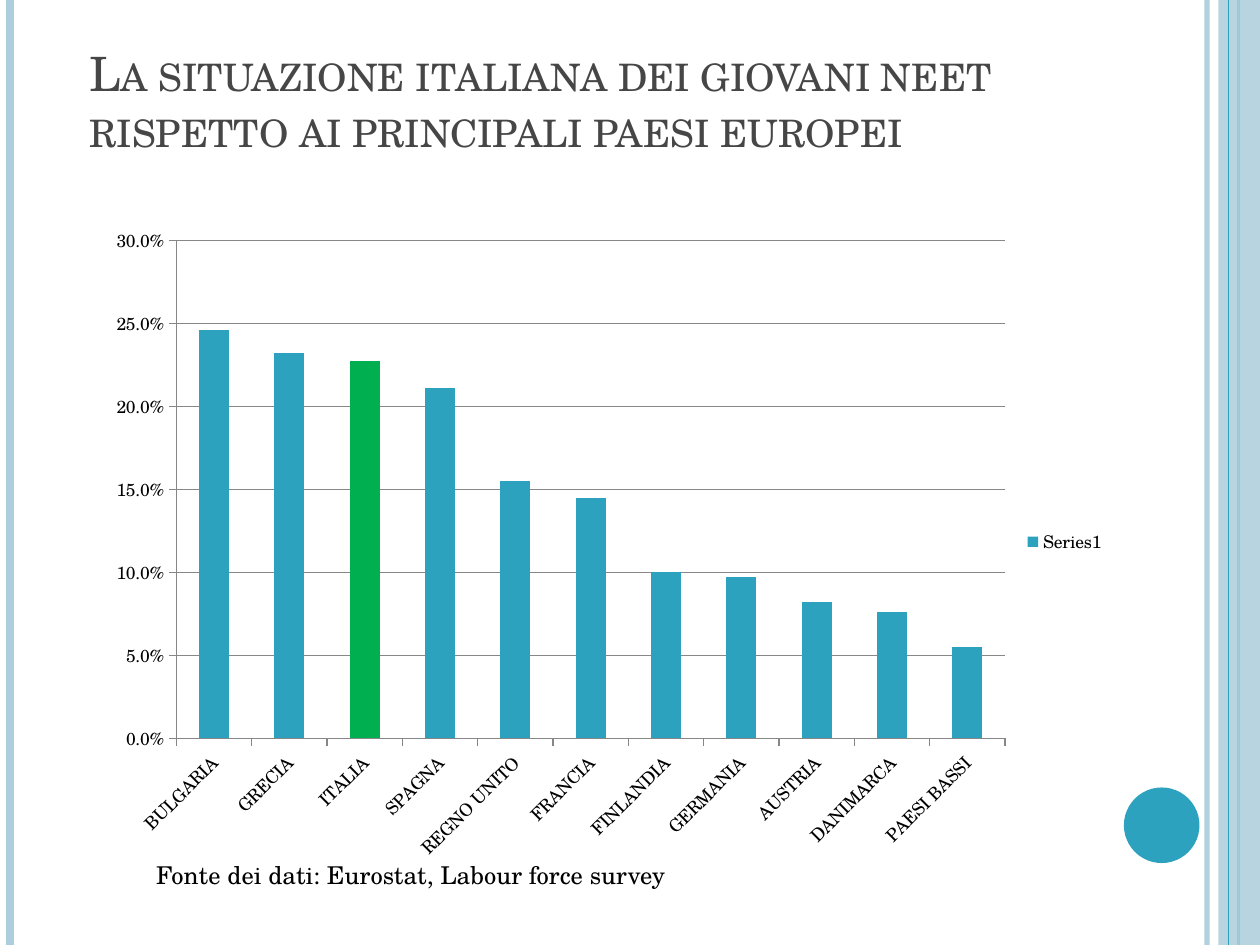
from lxml import etree
from pptx import Presentation, util as u
from pptx.chart.data import CategoryChartData
from pptx.dml.color import RGBColor
from pptx.enum import chart as c, shapes, text
from pptx.oxml import parse_xml
from pptx.oxml.ns import nsdecls, qn

FONT = "TeX Gyre Schola"
PALE = RGBColor(0xAD, 0xCE, 0xDC)
TEAL = RGBColor(0x2D, 0xA2, 0xBF)
GREEN = RGBColor(0x00, 0xB0, 0x50)
SLATE = RGBColor(0x46, 0x46, 0x46)
GREY = RGBColor(0x87, 0x87, 0x87)
BLACK = RGBColor(0, 0, 0)
WIDTH, HEIGHT = u.Inches(10), u.Inches(7.5)
HIGHLIGHTED = "ITALIA"
NEET_RATES = {
    "BULGARIA": 0.246, "GRECIA": 0.232, "ITALIA": 0.227, "SPAGNA": 0.211,
    "REGNO UNITO": 0.155, "FRANCIA": 0.145, "FINLANDIA": 0.1,
    "GERMANIA": 0.097, "AUSTRIA": 0.082, "DANIMARCA": 0.076,
    "PAESI BASSI": 0.055,
}


def inches(*lengths):
    """Convert several lengths to inches."""
    return [u.Inches(length) for length in lengths]


def set_opacity(shape, percent):
    """Make the first solid colour of a shape partly transparent."""
    color = next(shape._element.spPr.iter(qn("a:srgbClr")))
    etree.SubElement(color, qn("a:alpha"), val=str(percent * 1000))


def style_font(font, size, color):
    """Apply the slide's typeface with a size and a colour."""
    font.name, font.size = FONT, u.Pt(size)
    font.color.rgb = color


def add_rule(slide, x, color, weight, opacity=100):
    """Draw a vertical line over the full slide height."""
    line = slide.shapes.add_connector(
        shapes.MSO_CONNECTOR.STRAIGHT, u.Inches(x), 0, u.Inches(x), HEIGHT)
    line.line.color.rgb = color
    line.line.width = u.Pt(weight)
    etree.SubElement(line._element.spPr, qn("a:effectLst"))
    if opacity < 100:
        set_opacity(line, opacity)


def add_plain_shape(slide, kind, box, color, opacity=100):
    """Add a filled shape without outline or shadow."""
    shape = slide.shapes.add_shape(kind, *inches(*box))
    shape.shadow.inherit = False
    shape.fill.solid()
    shape.fill.fore_color.rgb = color
    shape.line.fill.background()
    if opacity < 100:
        set_opacity(shape, opacity)


def add_frame(slide):
    """Decorate the slide's edges and corner."""
    add_rule(slide, 9.58, PALE, 3, 93)
    add_rule(slide, 0.08, PALE, 4.5)
    add_rule(slide, 9.83, TEAL, 1.5)
    add_plain_shape(slide, shapes.MSO_SHAPE.RECTANGLE,
                    (9.67, 0, 0.33, 7.5), PALE, 87)
    add_rule(slide, 9.75, TEAL, 0.75)
    add_plain_shape(slide, shapes.MSO_SHAPE.OVAL, (8.92, 6.25, 0.6, 0.6), TEAL)


def set_title(slide, wording):
    """Fill the title placeholder in small capitals."""
    title = slide.shapes.title
    title.left, title.top, title.width, title.height = inches(0.61, 0.05, 8.17, 1.25)
    frame = title.text_frame
    frame.text = wording
    frame.word_wrap = True
    frame.auto_size = text.MSO_AUTO_SIZE.NONE
    frame.vertical_anchor = text.MSO_ANCHOR.BOTTOM
    paragraph = frame.paragraphs[0]
    paragraph.alignment = text.PP_ALIGN.LEFT
    run = paragraph.runs[0]
    style_font(run.font, 27, SLATE)
    run._r.get_or_add_rPr().set("cap", "small")


def style_axis(axis):
    """Give an axis grey lines and outside ticks."""
    axis.format.line.color.rgb = GREY
    axis.major_tick_mark = c.XL_TICK_MARK.OUTSIDE
    axis.minor_tick_mark = c.XL_TICK_MARK.NONE
    style_font(axis.tick_labels.font, 10, BLACK)


def place_plot(chart, x, y, width, height):
    """Fix the inner plot area as shares of the chart's size."""
    area = chart._chartSpace.chart.plotArea
    for layout in area.findall(qn("c:layout")):
        area.remove(layout)
    area.insert(0, parse_xml(
        f'<c:layout {nsdecls("c")}><c:manualLayout>'
        '<c:layoutTarget val="inner"/><c:xMode val="edge"/><c:yMode val="edge"/>'
        f'<c:x val="{x}"/><c:y val="{y}"/><c:w val="{width}"/><c:h val="{height}"/>'
        '</c:manualLayout></c:layout>'))


def add_rate_chart(slide):
    """Add the column chart of rates with one country highlighted."""
    data = CategoryChartData(number_format="0.0%")
    data.categories = list(NEET_RATES)
    data.add_series("Series1", NEET_RATES.values())
    chart = slide.shapes.add_chart(
        c.XL_CHART_TYPE.COLUMN_CLUSTERED, *inches(0.75, 1.7, 8.12, 5.2), data).chart
    style_font(chart.font, 10, BLACK)
    chart.has_title = False
    chart.has_legend = True
    chart.legend.position = c.XL_LEGEND_POSITION.RIGHT
    chart.legend.include_in_layout = False
    place_plot(chart, 0.08, 0.04, 0.81, 0.76)
    plot = chart.plots[0]
    plot.vary_by_categories = False
    plot.gap_width = 150
    series = plot.series[0]
    highlighted = series.points[list(NEET_RATES).index(HIGHLIGHTED)]
    for part, color in ((series, TEAL), (highlighted, GREEN)):
        part.format.fill.solid()
        part.format.fill.fore_color.rgb = color
    style_axis(chart.category_axis)
    style_axis(chart.value_axis)
    body = chart.category_axis._element.find(qn("c:txPr")).find(qn("a:bodyPr"))
    body.set("rot", "-2700000")
    axis = chart.value_axis
    axis.minimum_scale, axis.maximum_scale, axis.major_unit = 0, 0.3, 0.05
    axis.tick_labels.number_format = "0.0%"
    axis.tick_labels.number_format_is_linked = False
    axis.major_gridlines.format.line.color.rgb = GREY


def add_source(slide, wording):
    """Add the data source below the chart."""
    frame = slide.shapes.add_textbox(*inches(1.14, 6.78, 4.29, 0.34)).text_frame
    frame.text = wording
    frame.word_wrap = False
    frame.auto_size = text.MSO_AUTO_SIZE.SHAPE_TO_FIT_TEXT
    style_font(frame.paragraphs[0].runs[0].font, 14, BLACK)


def main():
    """Build and save the slide."""
    presentation = Presentation()
    presentation.slide_width, presentation.slide_height = WIDTH, HEIGHT
    slide = presentation.slides.add_slide(presentation.slide_layouts[5])
    add_frame(slide)
    set_title(slide, "La situazione italiana dei giovani neet "
                     "rispetto ai principali paesi europei")
    add_rate_chart(slide)
    add_source(slide, "Fonte dei dati: Eurostat, Labour force survey")
    presentation.save("out.pptx")


if __name__ == "__main__":
    main()
